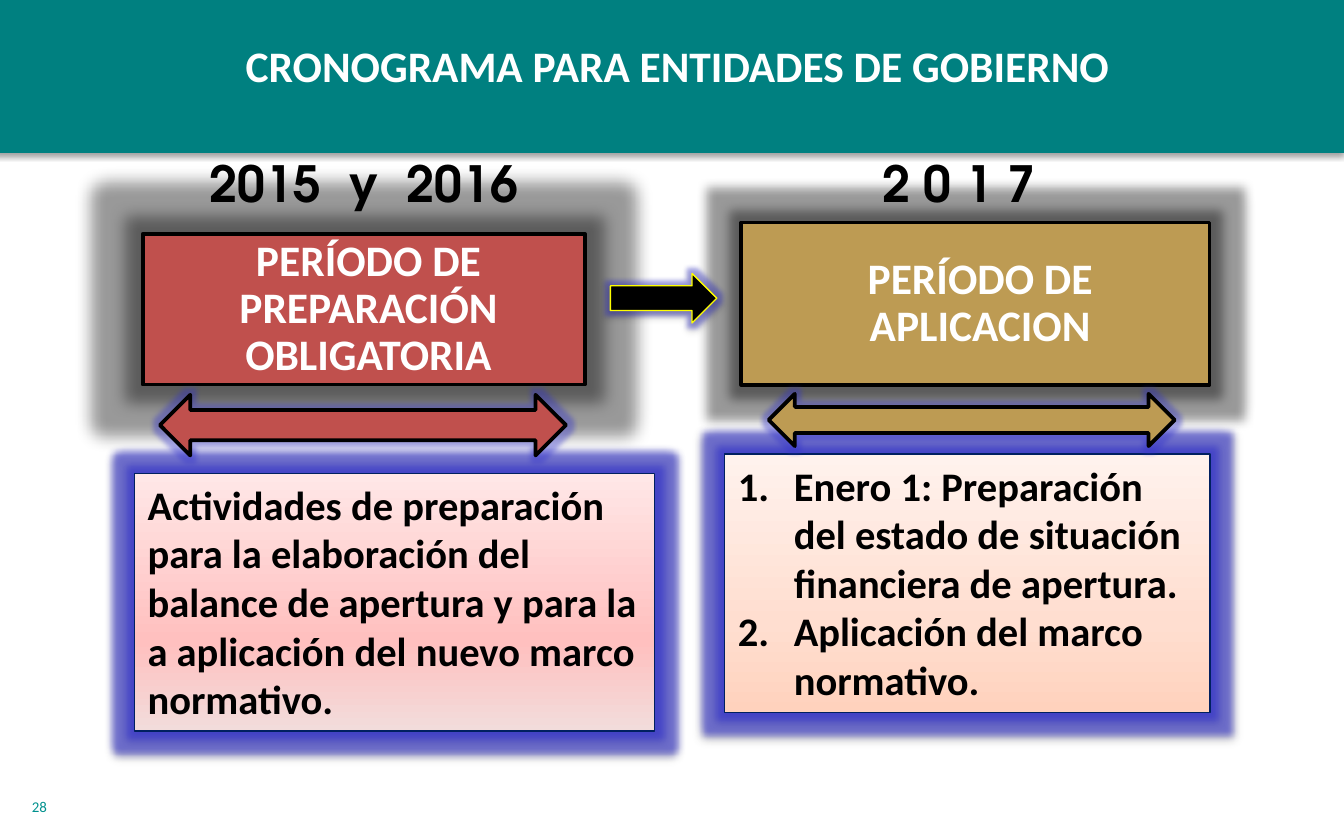
import pptx
import pptx.dml.color
import pptx.enum.shapes
import pptx.enum.text
import pptx.oxml
import pptx.oxml.ns
import pptx.util

Pt = pptx.util.Pt
SHAPE = pptx.enum.shapes.MSO_SHAPE
ALIGN = pptx.enum.text.PP_ALIGN
ANCHOR = pptx.enum.text.MSO_ANCHOR

TEAL, NUMBER_TEAL = "008080", "00918E"
RED, GOLD = "C0504D", "BD9B53"
BLACK, WHITE, YELLOW, NAVY, BLUE = "000000", "FFFFFF", "FFFF00", "002060", "3333CC"
BODY_FONT, YEAR_FONT = "Calibri", "TeX Gyre Adventor"
HEADING_SIZE, YEAR_SIZE, BODY_SIZE = 23.3, 26.7, 21.7
PINK_STOPS = ((0, "F2DCDB"), (35, "FFC0BF"), (100, "FFE7E7"))
PEACH_STOPS = ((0, "FFD2BD"), (35, "FFDED0"), (100, "FFF2ED"))


def colour(value):
    return pptx.dml.color.RGBColor.from_string(value)


def element(body):
    return pptx.oxml.parse_xml(body.replace(">", f" {pptx.oxml.ns.nsdecls('a')}>", 1))


def solid(value, alpha):
    return f'<a:srgbClr val="{value}"><a:alpha val="{alpha * 1000}"/></a:srgbClr>'


class Slide:
    def __init__(self, deck):
        self.page = deck.slides.add_slide(deck.slide_layouts[6])

    def fill_text(self, box, paragraphs, size, ink, font=BODY_FONT, align=ALIGN.LEFT,
                  bold=True, spacing=None, numbered=False):
        box.text_frame.word_wrap = True
        for index, text in enumerate(paragraphs):
            para = box.text_frame.paragraphs[0] if index == 0 else box.text_frame.add_paragraph()
            para.alignment = align
            if spacing:
                para.line_spacing = spacing
            if numbered:
                properties = para._p.get_or_add_pPr()
                properties.set("marL", str(Pt(30)))
                properties.set("indent", str(Pt(-30)))
                properties.append(element('<a:buAutoNum type="arabicPeriod"></a:buAutoNum>'))
            span = para.add_run()
            span.text = text
            span.font.name = font
            span.font.size = Pt(size)
            span.font.bold = bold
            span.font.color.rgb = colour(ink)

    def text(self, place, text, size, ink, **style):
        box = self.page.shapes.add_textbox(*map(Pt, place))
        self.fill_text(box, [text], size, ink, **style)

    def shape(self, kind, place, fill, line=None, width=0.75, glow=None, shadow=0):
        box = self.page.shapes.add_shape(kind, *map(Pt, place))
        box.shadow.inherit = False
        if isinstance(fill, str):
            box.fill.solid()
            box.fill.fore_color.rgb = colour(fill)
        else:
            self.gradient(box, fill)
        if line:
            box.line.color.rgb = colour(line)
            box.line.width = Pt(width)
        else:
            box.line.fill.background()
        effects = box._element.spPr.find(pptx.oxml.ns.qn("a:effectLst"))
        if glow:
            value, radius, alpha = glow
            effects.append(element(f'<a:glow rad="{Pt(radius)}">{solid(value, alpha)}</a:glow>'))
        if shadow:
            effects.append(element(
                f'<a:outerShdw blurRad="{Pt(3.1)}" dist="{Pt(1.6)}" dir="5400000" '
                f'rotWithShape="0">{solid(BLACK, shadow)}</a:outerShdw>'))
        return box

    def gradient(self, box, stops):
        box.fill.gradient()
        fill = box._element.spPr.find(pptx.oxml.ns.qn("a:gradFill"))
        listing = "".join(
            f'<a:gs pos="{position * 1000}"><a:srgbClr val="{value}"/></a:gs>'
            for position, value in stops)
        fill.replace(fill.find(pptx.oxml.ns.qn("a:gsLst")),
                     element(f"<a:gsLst>{listing}</a:gsLst>"))
        fill.find(pptx.oxml.ns.qn("a:lin")).set("ang", "16200000")

    def period(self, place, text, fill, radius):
        box = self.shape(SHAPE.RECTANGLE, place, fill, BLACK, 2, (BLACK, radius, 40))
        frame = box.text_frame
        frame.vertical_anchor = ANCHOR.MIDDLE
        frame.margin_left, frame.margin_right = Pt(36.7), Pt(31.7)
        frame.margin_top = frame.margin_bottom = Pt(3)
        self.fill_text(box, [text], HEADING_SIZE, WHITE, align=ALIGN.CENTER, spacing=0.9)

    def details(self, place, paragraphs, stops, numbered=False):
        box = self.shape(SHAPE.RECTANGLE, place, stops, NAVY, glow=(BLUE, 8, 60), shadow=38)
        box.text_frame.vertical_anchor = ANCHOR.TOP
        self.fill_text(box, paragraphs, BODY_SIZE, BLACK, numbered=numbered)

    def span_arrow(self, place, fill):
        self.shape(SHAPE.LEFT_RIGHT_ARROW, place, fill, BLACK, 2, (BLUE, 5, 40))


def main():
    deck = pptx.Presentation()
    deck.slide_width, deck.slide_height = Pt(720), Pt(450)
    slide = Slide(deck)

    slide.shape(SHAPE.RECTANGLE, (-3, -1.5, 723, 83.5), TEAL, shadow=38)
    slide.text((10, 424, 150, 21.5), "28", 8, NUMBER_TEAL, bold=False)

    slide.period((76.5, 125.3, 236.8, 80.8), "PERÍODO DE PREPARACIÓN OBLIGATORIA", RED, 18)
    slide.period((397.2, 119.2, 250.8, 87), "PERÍODO DE APLICACION", GOLD, 12)

    for left, width, years in ((100, 190, "2015  y  2016"), (459.4, 108.7, "2 0 1 7")):
        slide.text((left, 78.5, width, 39.6), years, YEAR_SIZE, BLACK,
                   font=YEAR_FONT, align=ALIGN.CENTER)

    slide.details((388.2, 243.2, 260, 138.5), [
        "Enero 1: Preparación del estado de situación financiera de apertura.",
        "Aplicación del marco normativo.",
    ], PEACH_STOPS, numbered=True)
    slide.details((72, 253.5, 278.7, 138.2), [
        "Actividades de preparación para la elaboración del balance de apertura "
        "y para la a aplicación del nuevo marco normativo.",
    ], PINK_STOPS)

    slide.shape(SHAPE.RIGHT_ARROW, (327, 146.5, 57, 26.5), BLACK, YELLOW,
                glow=(BLUE, 5, 40), shadow=35)
    slide.span_arrow((85.7, 211.5, 217.5, 32.5), RED)
    slide.span_arrow((411.8, 211, 217.5, 28), GOLD)

    slide.text((95.8, 17.3, 534.2, 35.3), "CRONOGRAMA PARA ENTIDADES DE GOBIERNO",
               HEADING_SIZE, WHITE, align=ALIGN.CENTER)
    deck.save("out.pptx")


if __name__ == "__main__":
    main()
